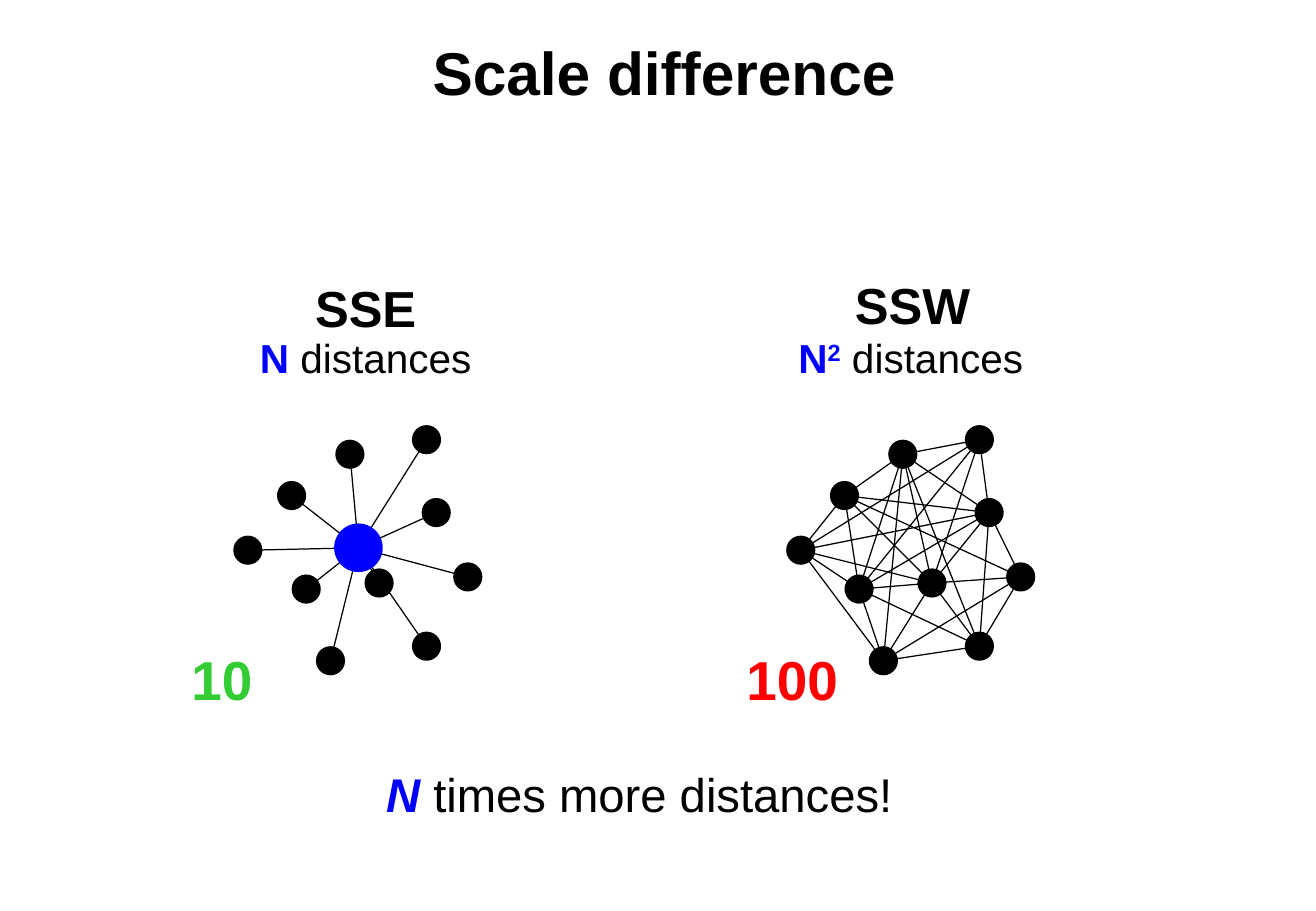
from itertools import combinations

from lxml import etree
from pptx import Presentation
from pptx import util as u
from pptx.dml.color import RGBColor
from pptx.enum import shapes, text
from pptx.oxml.ns import qn

BLACK = RGBColor(0x00, 0x00, 0x00)
BLUE = RGBColor(0x00, 0x00, 0xFF)
GREEN = RGBColor(0x33, 0xCC, 0x33)
RED = RGBColor(0xFF, 0x00, 0x00)

deck = Presentation()
deck.slide_width, deck.slide_height = u.Inches(10.83), u.Inches(7.5)
page = deck.slides.add_slide(deck.slide_layouts[5])

PANEL_STEP = 4.55  # from the star on the left to the mesh on the right
DOT, HUB = 0.24, 0.4
HUB_CENTRE = (2.95, 4.51)
DOT_CENTRES = [(3.12, 4.8), (2.88, 3.74), (2.4, 4.08), (2.52, 4.85), (3.59, 4.22),
               (3.85, 4.75), (3.51, 5.32), (3.51, 3.62), (2.04, 4.53), (2.72, 5.44)]
UNLINKED = {(1, 5), (1, 8), (2, 6), (2, 7), (2, 9), (3, 5),
            (4, 9), (5, 7), (5, 8), (6, 7), (6, 8), (7, 9)}


def write(box, spans):
    """Fill a box with one centred paragraph of (wording, format values) spans."""
    para = box.text_frame.paragraphs[0]
    para.alignment = text.PP_ALIGN.CENTER
    for wording, size, color, values in spans:
        span = para.add_run()
        span.text = wording
        span.font.color.rgb = color
        for name, value in {"name": "Arial", "size": u.Pt(size), "bold": True, **values}.items():
            setattr(span.font, name, value)
        if wording == "2":
            span.font._element.set("baseline", "30000")


def add_disc(centre, diameter, color):
    left, top = (u.Inches(c - diameter / 2) for c in centre)
    disc = page.shapes.add_shape(shapes.MSO_SHAPE.OVAL, left, top,
                                 u.Inches(diameter), u.Inches(diameter))
    disc.shadow.inherit = False
    disc.fill.solid()
    disc.fill.fore_color.rgb = color
    disc.line.fill.background()


# Title
title = page.shapes.title
title.left, title.top, title.width, title.height = (
    u.Inches(v) for v in (0.35, 0.29, 10.23, 0.6))
frame = title.text_frame
for name, value in {"margin_left": 0, "margin_right": 0, "margin_top": 0, "margin_bottom": 0,
                    "vertical_anchor": text.MSO_ANCHOR.MIDDLE,
                    "auto_size": text.MSO_AUTO_SIZE.NONE}.items():
    setattr(frame, name, value)
write(title, [("Scale difference", 35.8, BLACK, {})])

# Distances: every dot to the hub, then dot to dot
mesh_centres = [(x + PANEL_STEP, y) for x, y in DOT_CENTRES]
distances = [(HUB_CENTRE, centre) for centre in DOT_CENTRES]
distances += [(mesh_centres[a], mesh_centres[b])
              for a, b in combinations(range(len(mesh_centres)), 2)
              if (a, b) not in UNLINKED]
for start, end in distances:
    line = page.shapes.add_connector(shapes.MSO_CONNECTOR.STRAIGHT,
                                     *(u.Inches(v) for v in start + end))
    line.line.color.rgb = BLACK
    line.line.width = u.Pt(0.75)
    etree.SubElement(line._element.spPr, qn("a:effectLst"))

for centre in DOT_CENTRES + mesh_centres:
    add_disc(centre, DOT, BLACK)
add_disc(HUB_CENTRE, HUB, BLUE)

# Labels
regular = {"bold": False}
labels = [
    (2.49, 2.23, 1.04, 0.61, [("SSE", 30, BLACK, {})]),
    (6.93, 2.21, 1.16, 0.61, [("SSW", 30, BLACK, {})]),
    (2.03, 2.69, 1.96, 0.5, [("N", 24, BLUE, {}), (" distances", 24, BLACK, regular)]),
    (6.45, 2.69, 2.09, 0.5, [("N", 24, BLUE, {}), ("2", 24, BLUE, {}),
                             (" distances", 24, BLACK, regular)]),
    (1.47, 5.27, 0.71, 0.65, [("10", 32.5, GREEN, {})]),
    (6.04, 5.27, 0.96, 0.65, [("100", 32.5, RED, {})]),
    (3.05, 6.25, 4.42, 0.57, [("N", 28, BLUE, {"italic": True}),
                              (" times more distances!", 28, BLACK, regular)]),
]
for *place, spans in labels:
    box = page.shapes.add_textbox(*(u.Inches(v) for v in place))
    box.text_frame.word_wrap = False
    box.text_frame.auto_size = text.MSO_AUTO_SIZE.SHAPE_TO_FIT_TEXT
    write(box, spans)

deck.save("out.pptx")
